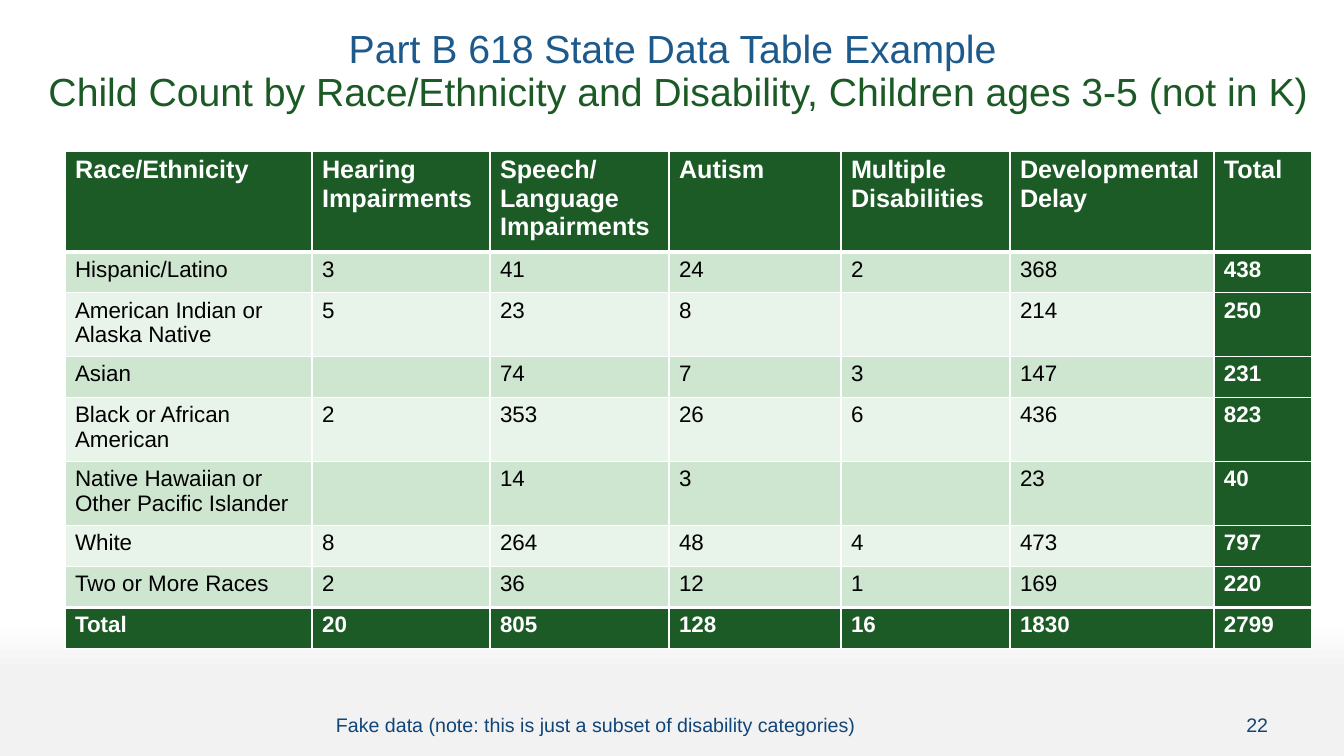
from lxml import etree
from pptx import Presentation
from pptx.dml.color import RGBColor
from pptx.enum.text import MSO_ANCHOR, PP_ALIGN
from pptx.oxml.ns import qn
from pptx.util import Emu, Pt

LEFT, CENTER, RIGHT = PP_ALIGN.LEFT, PP_ALIGN.CENTER, PP_ALIGN.RIGHT
TOP, MIDDLE = MSO_ANCHOR.TOP, MSO_ANCHOR.MIDDLE

SLIDE_W, SLIDE_H = 1344, 756
EMU_PER_PX = 12192000 / SLIDE_W
FONT = "Arial"
COLORS = {
    "white": "FFFFFF",
    "black": "000000",
    "footer_gray": "F2F2F2",
    "title_blue": "1D598B",
    "subtitle_green": "1C5A25",
    "footer_blue": "104578",
    "total_green": "1C5B25",
    "band_dark": "CEE5D0",
    "band_light": "E8F3E9",
}

HEADERS = ["Race/Ethnicity", "Hearing Impairments", "Speech/ Language Impairments",
           "Autism", "Multiple Disabilities", "Developmental Delay", "Total"]
CHILD_COUNTS = {
    "Hispanic/Latino": [3, 41, 24, 2, 368],
    "American Indian or Alaska Native": [5, 23, 8, None, 214],
    "Asian": [None, 74, 7, 3, 147],
    "Black or African American": [2, 353, 26, 6, 436],
    "Native Hawaiian or Other Pacific Islander": [None, 14, 3, None, 23],
    "White": [8, 264, 48, 4, 473],
    "Two or More Races": [2, 36, 12, 1, 169],
}
COLUMN_WIDTHS = [247, 178, 179, 172, 169, 204, 98]
ROW_HEIGHT = 41


def px(length):
    return Emu(round(length * EMU_PER_PX))


def rgb(name):
    return RGBColor.from_string(COLORS[name])


def add_run(paragraph, text, color, size, bold=False):
    run = paragraph.add_run()
    run.text = text
    font_format = {"name": FONT, "size": Pt(size), "bold": bold}
    for attribute, value in font_format.items():
        setattr(run.font, attribute, value)
    run.font.color.rgb = rgb(color)


def add_text_area(slide, box, anchor, align):
    """Add an empty wrapped text box and return its first paragraph."""
    frame = slide.shapes.add_textbox(*map(px, box)).text_frame
    frame.word_wrap = True
    frame.vertical_anchor = anchor
    paragraph = frame.paragraphs[0]
    paragraph.alignment = align
    return paragraph


def paint_background(slide):
    fill = slide.background.fill
    fill.gradient()
    fill.gradient_angle = 270
    fades = [(0.82, "white"), (0.89, "footer_gray")]
    for stop, (position, color) in zip(fill.gradient_stops, fades):
        stop.position = position
        stop.color.rgb = rgb(color)


def add_title(slide, box):
    title = add_text_area(slide, box, TOP, CENTER)
    title.line_spacing = 0.9
    add_run(title, "Part B 618 State Data Table Example ", "title_blue", 28)
    title.add_line_break()
    add_run(title, "Child Count by Race/Ethnicity and Disability, Children ages 3-5 (not in K)",
            "subtitle_green", 28)


def set_borders(cell, top, bottom):
    """Draw white borders; top and bottom widths are in points."""
    properties = cell._tc.get_or_add_tcPr()
    edges = {"a:lnL": 1, "a:lnR": 1, "a:lnT": top, "a:lnB": bottom}
    for index, (edge, width) in enumerate(edges.items()):
        line = etree.Element(qn(edge), w=str(Pt(width)))
        fill = etree.SubElement(line, qn("a:solidFill"))
        etree.SubElement(fill, qn("a:srgbClr"), val=COLORS["white"])
        properties.insert(index, line)


def table_rows():
    """Return header, counts and totals as rows of values."""
    body = [[group, *counts, sum(filter(None, counts))]
            for group, counts in CHILD_COUNTS.items()]
    totals = [sum(filter(None, column)) for column in list(zip(*body))[1:]]
    return [HEADERS, *body, ["Total", *totals]]


def add_count_table(slide, box):
    rows = table_rows()
    last_row, last_column = len(rows) - 1, len(HEADERS) - 1
    frame = slide.shapes.add_table(len(rows), len(HEADERS), *map(px, box))
    table = frame.table
    for column, width in zip(table.columns, COLUMN_WIDTHS):
        column.width = px(width)
    for r, values in enumerate(rows):
        table.rows[r].height = px(ROW_HEIGHT)
        band = "band_dark" if r % 2 else "band_light"
        top = 3 if r in (1, last_row) else 1
        bottom = 3 if r in (0, last_row - 1) else 1
        for c, value in enumerate(values):
            strong = r in (0, last_row) or c == last_column
            cell = table.cell(r, c)
            cell.fill.solid()
            cell.fill.fore_color.rgb = rgb("total_green" if strong else band)
            set_borders(cell, top, bottom)
            if value is not None:
                add_run(cell.text_frame.paragraphs[0], str(value),
                        "white" if strong else "black", 16 if r else 18, strong)
    frame.height = px(box[3])


def add_footer(slide, box):
    left, top, width, height = box
    number_width = 136
    note_width = width - number_width
    note = add_text_area(slide, (left, top, note_width, height), MIDDLE, LEFT)
    add_run(note, "Fake data (note: this is just a subset of disability categories)",
            "footer_blue", 14)
    number = add_text_area(slide, (left + note_width, top, number_width, height), MIDDLE, RIGHT)
    add_run(number, "22", "footer_blue", 14)


def main():
    deck = Presentation()
    deck.slide_width, deck.slide_height = px(SLIDE_W), px(SLIDE_H)
    slide = deck.slides.add_slide(deck.slide_layouts[6])
    paint_background(slide)
    add_title(slide, (29, 25, 1298, 101))
    add_count_table(slide, (65, 151, sum(COLUMN_WIDTHS), 497))
    add_footer(slide, (326, 697, 952, 55))
    deck.save("out.pptx")


if __name__ == "__main__":
    main()
